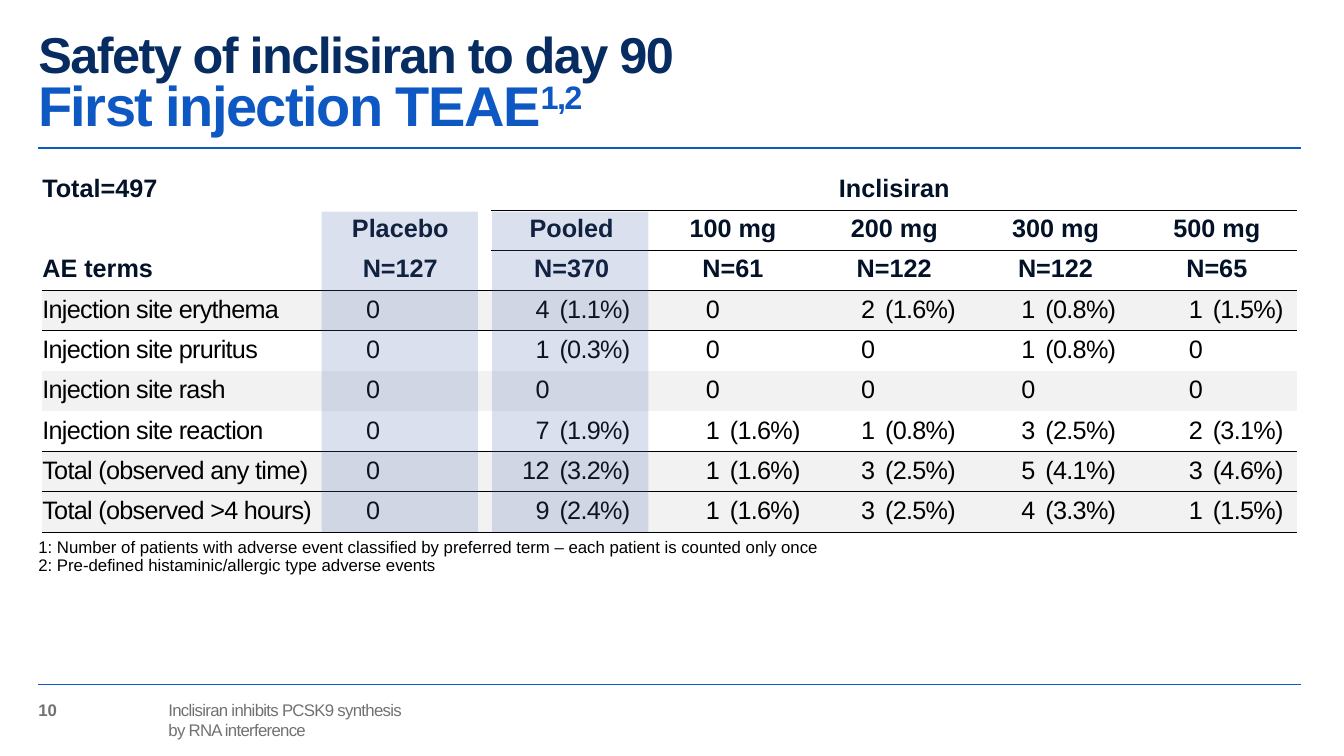
from dataclasses import dataclass

from lxml import etree
from pptx import Presentation
from pptx import util as u
from pptx.dml.color import RGBColor
from pptx.enum import shapes, text
from pptx.oxml.ns import qn

PX = 9144  # 100 px to the inch
NAVY, BLUE, INK, BLACK = "072C62", "0E58C4", "031227", "000000"
WHITE, PALE, GREY, TINT = "FFFFFF", "F2F2F2", "737071", "4A66AC"
PLAIN_GRID = "{2D5ABB26-0587-4C30-8999-92F81FD0307C}"
LEFT, RIGHT = 38, 1290


@dataclass
class Box:
    x: int
    y: int
    w: int
    h: int

    def emu(self) -> list[int]:
        return [n * PX for n in (self.x, self.y, self.w, self.h)]


@dataclass
class Piece:
    """One run; a line break comes first when fresh is set."""
    words: str
    size: int
    color: str
    bold: bool = False
    track: int = 0
    raised: bool = False
    fresh: bool = False


@dataclass
class Row:
    """A table line: one entry per study arm, each a count and a share."""
    term: str
    arms: list[str]
    fill: str


@dataclass
class Rule:
    row: int
    first: int
    points: float


WIDTHS = [275, 60, 100, 10, 58, 102, 67, 93, 61, 99, 60, 100, 66, 94]
ARMS = [1, 4, 6, 8, 10, 12]  # first column of each arm
HIGH = 40
HEADS = [
    ["Placebo", "Pooled", "100 mg", "200 mg", "300 mg", "500 mg"],
    ["N=127", "N=370", "N=61", "N=122", "N=122", "N=65"],
]
ROWS = [
    Row("Injection site erythema",
        ["0", "4 (1.1%)", "0", "2 (1.6%)", "1 (0.8%)", "1 (1.5%)"], PALE),
    Row("Injection site pruritus",
        ["0", "1 (0.3%)", "0", "0", "1 (0.8%)", "0"], WHITE),
    Row("Injection site rash", ["0"] * 6, PALE),
    Row("Injection site reaction",
        ["0", "7 (1.9%)", "1 (1.6%)", "1 (0.8%)", "3 (2.5%)", "2 (3.1%)"], WHITE),
    Row("Total (observed any time)",
        ["0", "12 (3.2%)", "1 (1.6%)", "3 (2.5%)", "5 (4.1%)", "3 (4.6%)"], PALE),
    Row("Total (observed >4 hours)",
        ["0", "9 (2.4%)", "1 (1.6%)", "3 (2.5%)", "4 (3.3%)", "1 (1.5%)"], PALE),
]
RULES = [Rule(0, 4, 0.25), Rule(2, 0, 1), Rule(6, 0, 1), Rule(8, 0, 1)]
BANDS = [Box(319, 210, 155, 318), Box(488, 210, 155, 318)]

TITLE = [
    Piece("Safety of inclisiran to day 90", 36, NAVY, True, -110),
    Piece("First injection TEAE", 40, BLUE, True, -110, fresh=True),
    Piece("1,2", 40, BLUE, True, -110, raised=True),
]
FOOT = [
    Piece("10", 12, GREY, True),
    Piece("\tInclisiran inhibits PCSK9 synthesis", 12, GREY, track=-50),
    Piece("\tby RNA interference", 12, GREY, track=-50, fresh=True),
]
NOTES = [
    "1: Number of patients with adverse event classified by preferred term"
    " – each patient is counted only once",
    "2: Pre-defined histaminic/allergic type adverse events",
]


def rgb(code: str) -> RGBColor:
    return RGBColor.from_string(code)


def write(par, pieces: list[Piece], lead: float = 1.0) -> None:
    par.line_spacing = lead
    for piece in pieces:
        if piece.fresh:
            par.add_line_break()
        run = par.add_run()
        run.text = piece.words
        font = run.font
        font.name, font.size, font.bold = "Arial", u.Pt(piece.size), piece.bold
        font.color.rgb = rgb(piece.color)
        props = run._r.get_or_add_rPr()
        if piece.track:
            props.set("spc", str(piece.track))
        if piece.raised:
            props.set("baseline", "30000")


def add_text(slide, box: Box, lines: list[list[Piece]], lead: float = 1.0,
             pad: int = 0, tab: int = 0) -> None:
    frame = slide.shapes.add_textbox(*box.emu()).text_frame
    frame.word_wrap = True
    frame.margin_left = frame.margin_right = 0
    frame.margin_top = frame.margin_bottom = pad * PX
    for i, line in enumerate(lines):
        par = frame.add_paragraph() if i else frame.paragraphs[0]
        if tab:
            stops = etree.SubElement(par._p.get_or_add_pPr(), qn("a:tabLst"))
            etree.SubElement(stops, qn("a:tab"), pos=str(tab * PX), algn="l")
        write(par, line, lead)


def add_rule(slide, y: int) -> None:
    line = slide.shapes.add_connector(
        shapes.MSO_CONNECTOR.STRAIGHT, LEFT * PX, y * PX, RIGHT * PX, y * PX)
    line.line.color.rgb = rgb(BLUE)
    line.line.width = u.Pt(1)
    etree.SubElement(line._element.spPr, qn("a:effectLst"))


def add_band(slide, box: Box) -> None:
    """Draw a see-through column highlight."""
    band = slide.shapes.add_shape(shapes.MSO_SHAPE.RECTANGLE, *box.emu())
    band.shadow.inherit = False
    band.line.fill.background()
    band.fill.solid()
    band.fill.fore_color.rgb = rgb(TINT)
    tone = band._element.spPr.find(".//" + qn("a:srgbClr"))
    etree.SubElement(tone, qn("a:alpha"), val="20000")


def edge(cell, side: str, points: float) -> None:
    line = etree.Element(qn(side), w=str(u.Pt(points)))
    fill = etree.SubElement(line, qn("a:solidFill"))
    etree.SubElement(fill, qn("a:srgbClr"), val=BLACK)
    cell._tc.get_or_add_tcPr().insert(0, line)


def put(cell, words: str, align: str = "LEFT", head: bool = False) -> None:
    par = cell.text_frame.paragraphs[0]
    par.alignment = getattr(text.PP_ALIGN, align)
    look = Piece(words, 18, INK, True) if head else Piece(words, 18, BLACK, track=-50)
    write(par, [look], 0.9)


def add_grid(slide) -> None:
    count = len(ROWS) + 3
    box = Box(42, 168, sum(WIDTHS), count * HIGH)
    grid = slide.shapes.add_table(count, len(WIDTHS), *box.emu()).table
    grid.first_row = grid.horz_banding = False
    grid._tbl.tblPr.find(qn("a:tableStyleId")).text = PLAIN_GRID
    for col, width in zip(grid.columns, WIDTHS):
        col.width = width * PX
    fills = [WHITE] * 3 + [row.fill for row in ROWS]
    for line, fill in zip(grid.rows, fills):
        line.height = HIGH * PX
        for cell in line.cells:
            cell.margin_left = cell.margin_right = 0
            cell.margin_top = cell.margin_bottom = 0
            cell.vertical_anchor = text.MSO_ANCHOR.MIDDLE
            cell.fill.solid()
            cell.fill.fore_color.rgb = rgb(fill)
    for rule in RULES:
        for c in range(rule.first, len(WIDTHS)):
            edge(grid.cell(rule.row, c), "a:lnB", rule.points)
            if rule.row + 1 < count:
                edge(grid.cell(rule.row + 1, c), "a:lnT", rule.points)

    put(grid.cell(0, 0), "Total=497", head=True)
    put(grid.cell(2, 0), "AE terms", head=True)
    grid.cell(0, 1).merge(grid.cell(0, 2))
    grid.cell(0, 4).merge(grid.cell(0, 13))
    put(grid.cell(0, 4), "Inclisiran", "CENTER", True)
    for r, heads in enumerate(HEADS, 1):
        for c, head in zip(ARMS, heads):
            grid.cell(r, c).merge(grid.cell(r, c + 1))
            put(grid.cell(r, c), head, "CENTER", True)
    for r, row in enumerate(ROWS, 3):
        put(grid.cell(r, 0), row.term)
        for c, arm in zip(ARMS, row.arms):
            num, _, share = arm.partition(" ")
            put(grid.cell(r, c), num, "RIGHT")
            if share:
                grid.cell(r, c + 1).margin_left = 10 * PX
                put(grid.cell(r, c + 1), share)


def main() -> None:
    deck = Presentation()
    deck.slide_width, deck.slide_height = 1333 * PX, 750 * PX
    slide = deck.slides.add_slide(deck.slide_layouts[6])
    for y in (147, 679):
        add_rule(slide, y)
    add_text(slide, Box(LEFT, 694, 1261, 40), [FOOT], tab=129)
    add_text(slide, Box(LEFT, 35, 1252, 112), [TITLE], 0.8)
    add_grid(slide)
    add_text(slide, Box(LEFT, 528, 1200, 145),
             [[Piece(note, 12, BLACK)] for note in NOTES], 0.9, 7)
    for band in BANDS:
        add_band(slide, band)
    deck.save("out.pptx")


if __name__ == "__main__":
    main()
